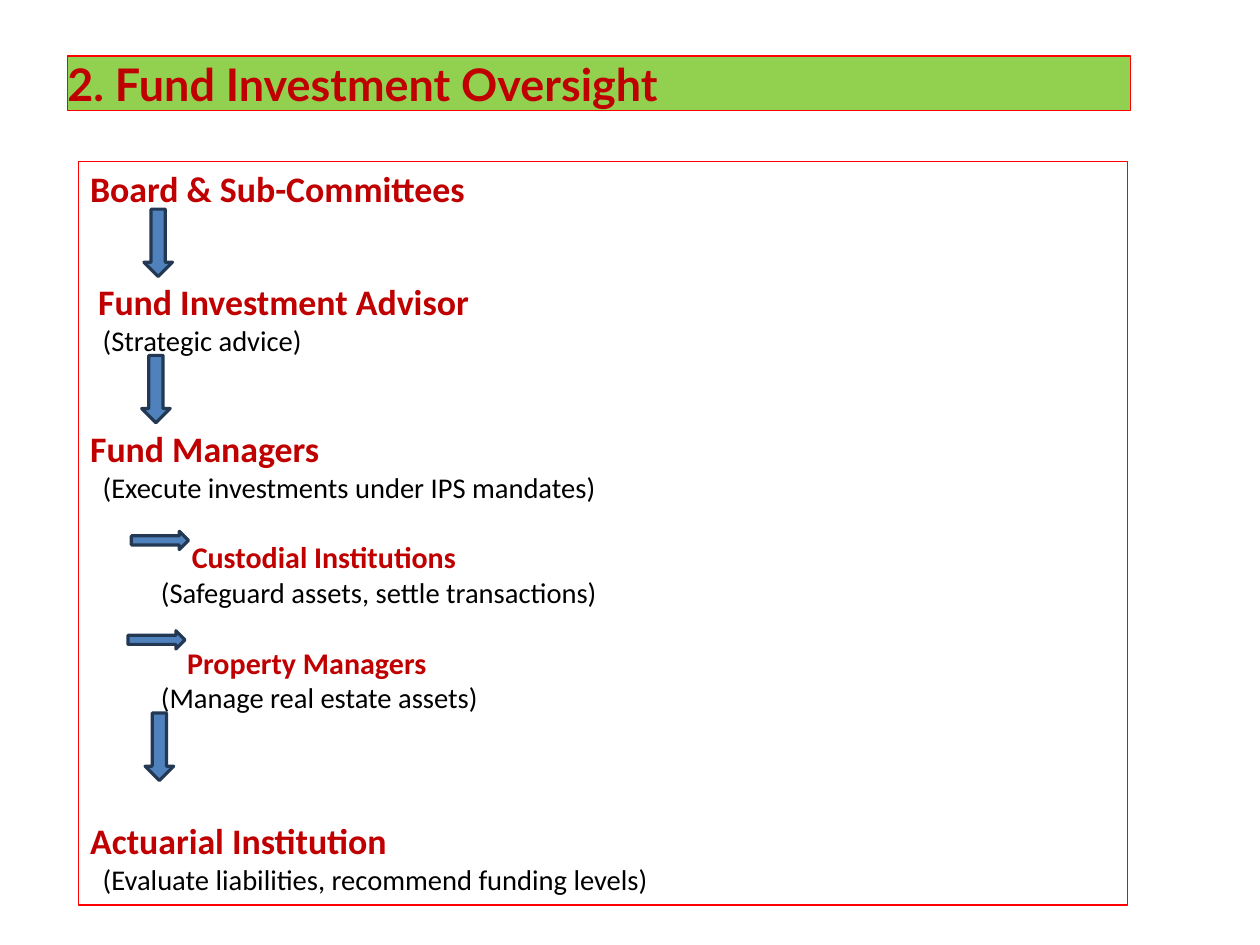
from pptx import Presentation
from pptx.dml.color import RGBColor
from pptx.enum.shapes import MSO_SHAPE
from pptx.enum.text import MSO_ANCHOR, PP_ALIGN
from pptx.util import Inches, Pt

RECT = MSO_SHAPE.RECTANGLE
DOWN = MSO_SHAPE.DOWN_ARROW
RIGHT = MSO_SHAPE.RIGHT_ARROW
LEFT = PP_ALIGN.LEFT
TOP = MSO_ANCHOR.TOP
MIDDLE = MSO_ANCHOR.MIDDLE

GREEN = RGBColor(0x92, 0xD0, 0x50)
RED = RGBColor(0xFF, 0x00, 0x00)
DARK_RED = RGBColor(0xC0, 0x00, 0x00)
BLACK = RGBColor(0x00, 0x00, 0x00)
BLUE = RGBColor(0x4F, 0x81, 0xBD)
NAVY = RGBColor(0x23, 0x39, 0x53)

TITLE = "2. Fund Investment Oversight"
ROW = 22
MAIN, SUB, NOTE = 22.6, 18.9, 18

BODIES = [
    ("Board & Sub-Committees", MAIN, 0, 0, None, 0),
    ("Fund Investment Advisor", MAIN, 0.07, 2, "(Strategic advice)", 0.11),
    ("Fund Managers", MAIN, 0, 2,
     "(Execute investments under IPS mandates)", 0.11),
    ("Custodial Institutions", SUB, 0.89, 1,
     "(Safeguard assets, settle transactions)", 0.62),
    ("Property Managers", SUB, 0.85, 1, "(Manage real estate assets)", 0.62),
    ("Actuarial Institution", MAIN, 0, 3,
     "(Evaluate liabilities, recommend funding levels)", 0.11),
]

DOWN_SPOTS = [(1.26, 1.83), (1.24, 3.11), (1.27, 6.24)]
RIGHT_SPOTS = [(1.15, 4.65), (1.12, 5.52)]


def add_block(slide, kind, left, top, width, height, fill, line, weight):
    block = slide.shapes.add_shape(
        kind, Inches(left), Inches(top), Inches(width), Inches(height))
    block.shadow.inherit = False
    if fill is None:
        block.fill.background()
    else:
        block.fill.solid()
        block.fill.fore_color.rgb = fill
    block.line.color.rgb = line
    block.line.width = Pt(weight)
    return block


def add_frame(block, anchor, side, edge):
    frame = block.text_frame
    frame.word_wrap = True
    frame.vertical_anchor = anchor
    frame.margin_left = frame.margin_right = Inches(side)
    frame.margin_top = frame.margin_bottom = Inches(edge)
    return frame


def write_line(para, text, size, color, bold, font="Calibri", indent=0, gap=0):
    para.alignment = LEFT
    para.space_before = Pt(gap)
    para._p.get_or_add_pPr().set("marL", str(Inches(indent)))
    run = para.add_run()
    run.text = text
    run.font.name = font
    run.font.size = Pt(size)
    run.font.bold = bold
    run.font.color.rgb = color


def add_title(slide):
    bar = add_block(slide, RECT, 0.59, 0.49, 9.31, 0.48, GREEN, RED, 0.75)
    frame = add_frame(bar, MIDDLE, 0, 0)
    write_line(frame.paragraphs[0], TITLE, 28.3, DARK_RED, True, "Lato")


def add_panel(slide):
    panel = add_block(slide, RECT, 0.69, 1.41, 9.18, 6.51, None, RED, 0.75)
    frame = add_frame(panel, TOP, 0.1, 0.05)
    para = frame.paragraphs[0]
    for name, size, indent, rows, note, inset in BODIES:
        if rows:
            para = frame.add_paragraph()
        write_line(para, name, size, DARK_RED, True,
                   indent=indent, gap=rows * ROW)
        if note:
            write_line(frame.add_paragraph(), note, NOTE, BLACK, False,
                       indent=inset)


def add_arrows(slide, kind, spots, width, height):
    for left, top in spots:
        add_block(slide, kind, left, top, width, height, BLUE, NAVY, 2)


def main():
    deck = Presentation()
    deck.slide_width = Inches(11.03)
    deck.slide_height = Inches(8.27)
    slide = deck.slides.add_slide(deck.slide_layouts[6])
    add_title(slide)
    add_panel(slide)
    add_arrows(slide, DOWN, DOWN_SPOTS, 0.25, 0.59)
    add_arrows(slide, RIGHT, RIGHT_SPOTS, 0.5, 0.16)
    deck.save("out.pptx")


if __name__ == "__main__":
    main()
